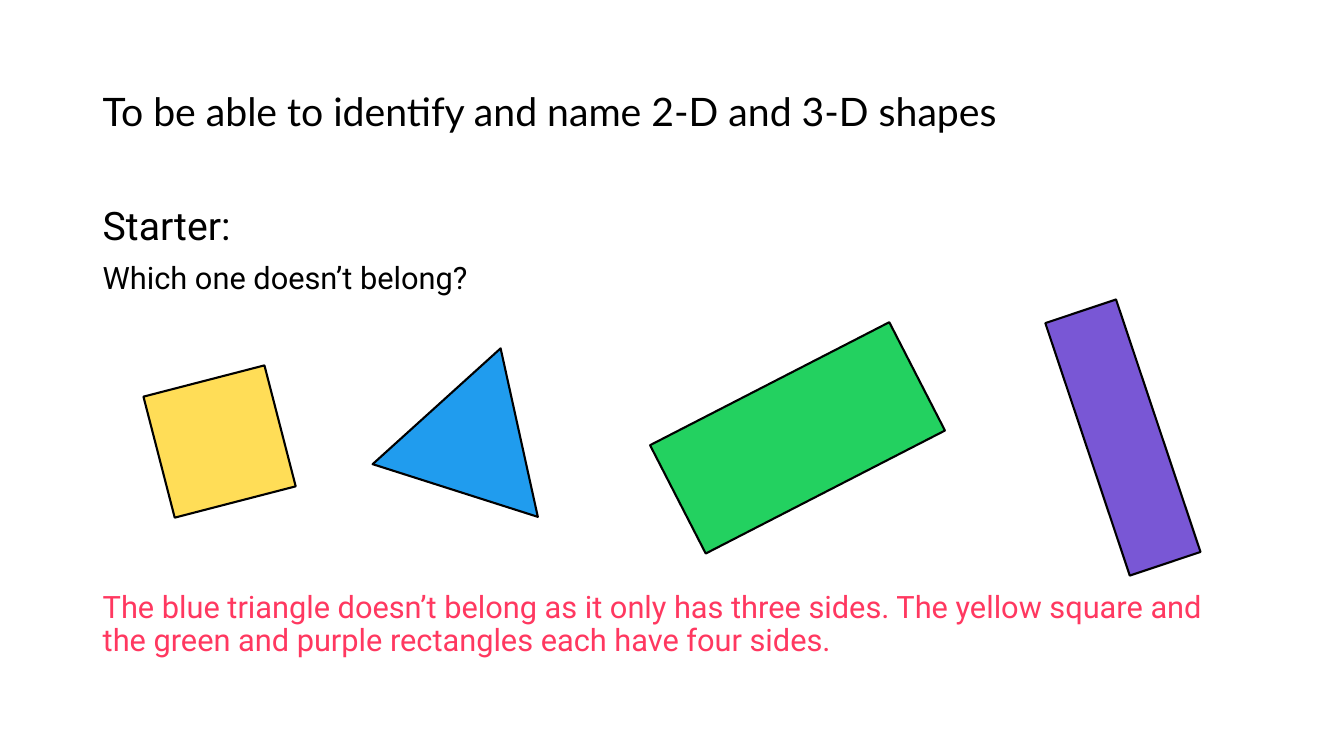
from dataclasses import dataclass

from pptx import Presentation
from pptx.dml.color import RGBColor
from pptx.enum.shapes import MSO_SHAPE
from pptx.enum.text import MSO_ANCHOR
from pptx.slide import Slide
from pptx.util import Cm, Pt

COLORS = {
    "black": "000000",
    "yellow": "FFDD57",
    "blue": "209CEE",
    "green": "23D160",
    "purple": "7957D5",
    "red": "FF3860",
}
MARGIN = 2.34


@dataclass(frozen=True)
class Line:
    text: str
    size: int
    font: str = "Roboto"
    color: str = "black"


@dataclass(frozen=True)
class Passage:
    top: float
    width: float
    height: float
    lines: tuple[Line, ...]
    anchor: MSO_ANCHOR = MSO_ANCHOR.TOP


@dataclass(frozen=True)
class Polygon:
    kind: MSO_SHAPE
    left: float
    top: float
    width: float
    height: float
    rotation: float
    color: str


PASSAGES = (
    Passage(1.02, 24.38, 3.68,
            (Line("To be able to identify and name 2-D and 3-D shapes", 28, "Lato"),),
            MSO_ANCHOR.MIDDLE),
    Passage(5.08, 29.21, 2.6,
            (Line("Starter:", 28), Line("Which one doesn’t belong?", 22))),
    Passage(14.78, 29.21, 2.2,
            (Line("The blue triangle doesn’t belong as it only has three sides. "
                  "The yellow square and the green and purple rectangles "
                  "each have four sides.", 22, color="red"),)),
)

POLYGONS = (
    Polygon(MSO_SHAPE.RECTANGLE, 3.96, 9.55, 3.15, 3.15, 345.5, "yellow"),
    Polygon(MSO_SHAPE.RECTANGLE, 16.71, 9.5, 6.78, 3.07, 332.8, "green"),
    Polygon(MSO_SHAPE.RECTANGLE, 27.36, 7.67, 1.88, 6.71, 341.5, "purple"),
    Polygon(MSO_SHAPE.ISOSCELES_TRIANGLE, 9.86, 8.69, 4.37, 3.76, 17.7, "blue"),
)


def rgb(name: str) -> RGBColor:
    return RGBColor.from_string(COLORS[name])


def write_passage(slide: Slide, passage: Passage) -> None:
    frame = slide.shapes.add_textbox(
        Cm(MARGIN), Cm(passage.top), Cm(passage.width), Cm(passage.height)
    ).text_frame
    frame.word_wrap = True
    frame.vertical_anchor = passage.anchor
    frame.text = "\n".join(line.text for line in passage.lines)
    for index, (paragraph, line) in enumerate(zip(frame.paragraphs, passage.lines)):
        paragraph.line_spacing = 0.9
        if index:
            paragraph.space_before = Pt(10)
        font = paragraph.runs[0].font
        font.name = line.font
        font.size = Pt(line.size)
        font.color.rgb = rgb(line.color)


def draw_polygon(slide: Slide, polygon: Polygon) -> None:
    outline = slide.shapes.add_shape(
        polygon.kind, Cm(polygon.left), Cm(polygon.top),
        Cm(polygon.width), Cm(polygon.height),
    )
    outline.rotation = polygon.rotation
    outline.shadow.inherit = False
    outline.fill.solid()
    outline.fill.fore_color.rgb = rgb(polygon.color)
    outline.line.color.rgb = rgb("black")
    outline.line.width = Pt(1.5)


def main() -> None:
    lesson = Presentation()
    lesson.slide_width = Cm(33.87)
    lesson.slide_height = Cm(19.05)
    starter = lesson.slides.add_slide(lesson.slide_layouts[6])
    for passage in PASSAGES:
        write_passage(starter, passage)
    for polygon in POLYGONS:
        draw_polygon(starter, polygon)
    lesson.save("out.pptx")


if __name__ == "__main__":
    main()
